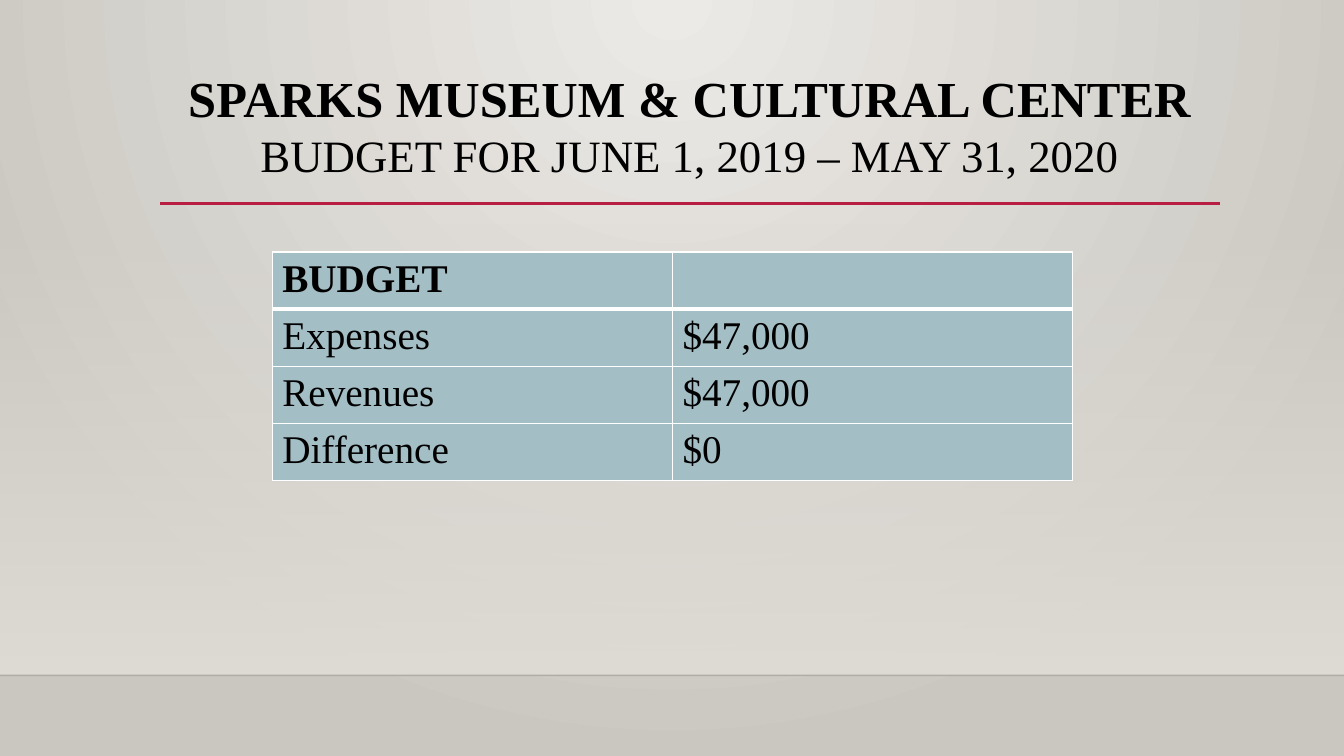
"""Budget slide for the Sparks Museum & Cultural Center."""
from lxml import etree
from pptx import Presentation
from pptx.dml.color import RGBColor
from pptx.enum.shapes import MSO_CONNECTOR, MSO_SHAPE
from pptx.enum.text import MSO_ANCHOR, PP_ALIGN
from pptx.oxml import parse_xml
from pptx.oxml.ns import nsdecls, qn
from pptx.util import Inches, Pt

FONT = "Times New Roman"
COLORS = {
    "glow": "ECEAE7", "edge": "CAC7C1", "wall": "DFDBD5", "floor": "000001",
    "accent": "B71E42", "text": "000000", "cell": "A4BEC6", "border": "FFFFFF",
}


def style(r, size, bold):
    r.font.name = FONT
    r.font.size = Pt(size)
    r.font.bold = bold
    r.font.color.rgb = RGBColor.from_string(COLORS["text"])


def add_line(s, x1, x2, y, color, width):
    line = s.shapes.add_connector(MSO_CONNECTOR.STRAIGHT, Inches(x1), Inches(y), Inches(x2), Inches(y))
    line.line.color.rgb = RGBColor.from_string(COLORS[color])
    line.line.width = Pt(width)
    etree.SubElement(line._element.spPr, qn("a:effectLst"))
    return line


prs = Presentation()
prs.slide_width, prs.slide_height = Inches(13.33), Inches(7.5)
s = prs.slides.add_slide(prs.slide_layouts[6])

s._element.cSld.insert(0, parse_xml(
    f'<p:bg {nsdecls("p", "a")}><p:bgPr><a:gradFill rotWithShape="1"><a:gsLst>'
    f'<a:gs pos="0"><a:srgbClr val="{COLORS["glow"]}"/></a:gs>'
    f'<a:gs pos="100000"><a:srgbClr val="{COLORS["edge"]}"/></a:gs></a:gsLst>'
    '<a:path path="circle"><a:fillToRect l="43000" r="43000" b="100000"/></a:path>'
    '</a:gradFill><a:effectLst/></p:bgPr></p:bg>'))

wall = s.shapes.add_shape(MSO_SHAPE.RECTANGLE, 0, Inches(2.21), prs.slide_width, Inches(4.49))
wall.shadow.inherit = False
wall.line.fill.background()
wall.fill.gradient()
wall.fill.gradient_angle = 270
for stop, position in zip(wall.fill.gradient_stops, (0, 1)):
    stop.position = position
    stop.color.rgb = RGBColor.from_string(COLORS["wall"])
first_color = wall._element.spPr.find(".//" + qn("a:srgbClr"))
etree.SubElement(first_color, qn("a:alpha"), val="0")

floor = add_line(s, 0, 13.33, 6.7, "floor", 1)
floor_color = floor._element.spPr.find(".//" + qn("a:srgbClr"))
etree.SubElement(floor_color, qn("a:alpha"), val="20000")
add_line(s, 1.59, 12.1, 2.02, "accent", 2.5)

title = s.shapes.add_textbox(Inches(1.59), Inches(0.62), Inches(10.5), Inches(1.4))
tf = title.text_frame
tf.word_wrap = True
tf.vertical_anchor = MSO_ANCHOR.TOP
p = tf.paragraphs[0]
p.text = "SPARKS MUSEUM & CULTURAL CENTER\vBUDGET FOR JUNE 1, 2019 – MAY 31, 2020"
p.alignment = PP_ALIGN.CENTER
for r, size, bold in zip(p.runs, (36, 32), (True, False)):
    style(r, size, bold)

rows = [("BUDGET", ""), ("Expenses", "$47,000"), ("Revenues", "$47,000"), ("Difference", "$0")]
table = s.shapes.add_table(len(rows), 2, Inches(2.7), Inches(2.5), Inches(7.94), Inches(2.12)).table
for i, row in enumerate(rows):
    table.rows[i].height = Inches(0.53)
    for j, text in enumerate(row):
        cell = table.cell(i, j)
        cell.text_frame.text = text
        for r in cell.text_frame.paragraphs[0].runs:
            style(r, 28, i == 0)
        tc_pr = cell._tc.get_or_add_tcPr()
        for side in ("lnL", "lnR", "lnT", "lnB"):
            heavy = (i, side) in ((0, "lnB"), (1, "lnT"))
            tc_pr.append(parse_xml(
                f'<a:{side} {nsdecls("a")} w="{Pt(3 if heavy else 1)}"><a:solidFill>'
                f'<a:srgbClr val="{COLORS["border"]}"/></a:solidFill></a:{side}>'))
        cell.fill.solid()
        cell.fill.fore_color.rgb = RGBColor.from_string(COLORS["cell"])

prs.save("out.pptx")
